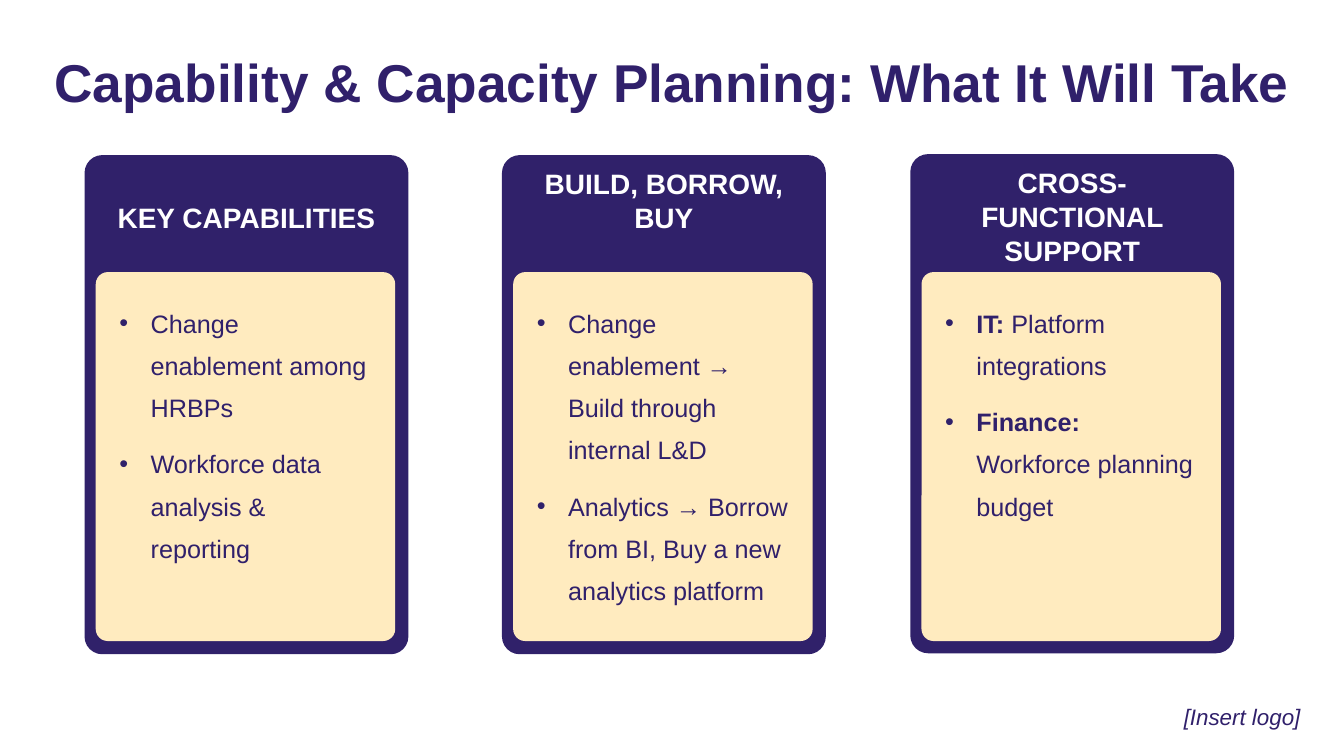
import pptx
import pptx.util
import pptx.dml.color
import pptx.enum.shapes
import pptx.enum.text
import lxml.etree

PX = 9144
INK = {"card": "30216A", "panel": "FFEBBF", "text": "30206B", "head": "FFFFFF"}
ALIGN = pptx.enum.text.PP_ALIGN
ANCHOR = pptx.enum.text.MSO_ANCHOR
ROUND = pptx.enum.shapes.MSO_SHAPE.ROUNDED_RECTANGLE

deck = pptx.Presentation()
deck.slide_width, deck.slide_height = 1333 * PX, 750 * PX
slide = deck.slides.add_slide(deck.slide_layouts[6])


def style(run, size, ink, bold=False, italic=False):
    font = run.font
    font.name, font.size = "Arial", pptx.util.Pt(size)
    font.bold, font.italic = bold, italic
    font.color.rgb = pptx.dml.color.RGBColor.from_string(INK[ink])


def block(left, top, width, height, round_by, fill):
    box = slide.shapes.add_shape(ROUND, left * PX, top * PX, width * PX, height * PX)
    box.adjustments[0] = round_by
    box.shadow.inherit = False
    box.fill.solid()
    box.fill.fore_color.rgb = pptx.dml.color.RGBColor.from_string(INK[fill])
    box.text_frame.word_wrap = True
    box.text_frame.vertical_anchor = ANCHOR.TOP
    return box


labels = [
    ("Capability & Capacity Planning: What It Will Take", 54, 52, 1227, 66, 38, True, ALIGN.LEFT),
    ("[Insert logo]", 1155, 691, 154, 44, 16, False, ALIGN.CENTER),
]
for text, left, top, width, height, size, bold, align in labels:
    box = slide.shapes.add_textbox(left * PX, top * PX, width * PX, height * PX)
    frame = box.text_frame
    frame.margin_left = frame.margin_right = frame.margin_top = frame.margin_bottom = 0
    frame.word_wrap = True
    frame.vertical_anchor = ANCHOR.MIDDLE
    frame.text = text
    para = frame.paragraphs[0]
    para.alignment, para.line_spacing = align, 0.9
    style(para.runs[0], size, "text", bold, not bold)

cards = [
    (86, 156, 38, "KEY CAPABILITIES", [
        ("", "Change enablement among HRBPs"),
        ("", "Workforce data analysis & reporting")]),
    (500, 156, 5, "BUILD, BORROW, BUY", [
        ("", "Change enablement → Build through internal L&D"),
        ("", "Analytics → Borrow from BI, Buy a new analytics platform")]),
    (905, 155, 5, "CROSS-FUNCTIONAL SUPPORT", [
        ("IT: ", "Platform integrations"),
        ("Finance: ", "Workforce planning budget")]),
]
for left, top, inset, head, items in cards:
    card = block(left, top, 317, 491, 0.049, "card")
    card.line.color.rgb = pptx.dml.color.RGBColor.from_string(INK["card"])
    card.line.width = pptx.util.Pt(3)
    frame = card.text_frame
    frame.margin_top = inset * PX
    frame.text = head
    frame.paragraphs[0].alignment = ALIGN.CENTER
    style(frame.paragraphs[0].runs[0], 20, "head", True)

    panel = block(left + 9, 270, 297, 366, 0.04, "panel")
    panel.line.fill.background()
    frame = panel.text_frame
    frame.margin_left = frame.margin_right = frame.margin_top = frame.margin_bottom = 20 * PX
    for i, (lead, text) in enumerate(items):
        para = frame.add_paragraph() if i else frame.paragraphs[0]
        para.alignment = ALIGN.LEFT
        para.line_spacing, para.space_before = 1.4, pptx.util.Pt(10)
        for words, bold in ((lead, True), (text, False)):
            if words:
                run = para.add_run()
                run.text = words
                style(run, 18, "text", bold)
        props = para._p.get_or_add_pPr()
        props.set("marL", str(31 * PX))
        props.set("indent", str(-31 * PX))
        tint = lxml.etree.SubElement(props, pptx.oxml.ns.qn("a:buClr"))
        lxml.etree.SubElement(tint, pptx.oxml.ns.qn("a:srgbClr")).set("val", INK["card"])
        lxml.etree.SubElement(props, pptx.oxml.ns.qn("a:buFont")).set("typeface", "Arial")
        lxml.etree.SubElement(props, pptx.oxml.ns.qn("a:buChar")).set("char", "•")

deck.save("out.pptx")
